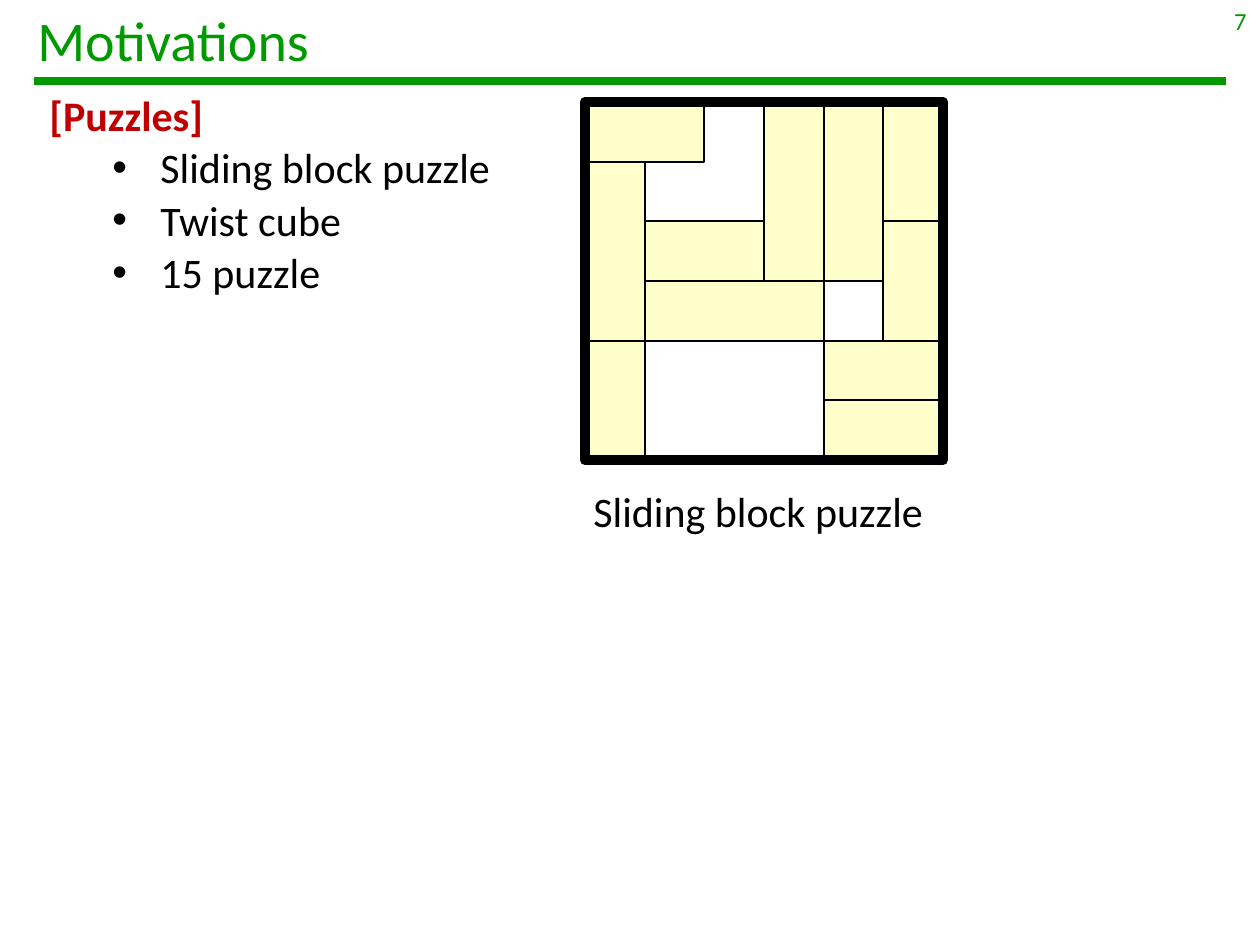
from lxml import etree
from pptx import Presentation
from pptx.dml.color import RGBColor
from pptx.enum.shapes import MSO_CONNECTOR as Connector, MSO_SHAPE as Shape
from pptx.enum.text import MSO_ANCHOR as Anchor, PP_ALIGN as Align
from pptx.oxml.ns import qn
from pptx.util import Emu, Pt

GREEN = RGBColor(0x00, 0x99, 0x00)
RED = RGBColor(0xC0, 0x00, 0x00)
BLACK = RGBColor(0x00, 0x00, 0x00)
CREAM = RGBColor(0xFF, 0xFF, 0xCC)

PX_PER_INCH = 126
BOARD_LEFT, BOARD_TOP, BOARD_SIZE = 585, 102, 358
BOARD_CELLS = 6

# Puzzle pieces: column, row, columns wide, rows high
PIECES = [
    (0, 1, 1, 3), (1, 2, 2, 1), (4, 5, 2, 1), (4, 4, 2, 1),
    (0, 0, 2, 1), (5, 2, 1, 2), (5, 0, 1, 2), (0, 4, 1, 2),
    (4, 0, 1, 3), (3, 0, 1, 3), (1, 3, 3, 1),
]


def px(length):
    return Emu(round(length * 914400 / PX_PER_INCH))


class PageBuilder:
    font = "Calibri"

    def __init__(self, page):
        self.page = page

    def style(self, para, size, color, bold=False):
        for span in para.runs:
            span.font.name = self.font
            span.font.size = Pt(size)
            span.font.bold = bold
            span.font.color.rgb = color

    def text(self, bounds, words, size, color, align=Align.LEFT,
             anchor=Anchor.TOP, wrap=True):
        box = self.page.shapes.add_textbox(*map(px, bounds))
        frame = box.text_frame
        frame.word_wrap = wrap
        frame.vertical_anchor = anchor
        frame.text = words
        para = frame.paragraphs[0]
        para.alignment = align
        self.style(para, size, color)
        return frame

    def bulleted_list(self, bounds, heading, items, size):
        frame = self.text(bounds, heading, size, RED)
        self.style(frame.paragraphs[0], size, RED, bold=True)
        for item in items:
            para = frame.add_paragraph()
            para.text = item
            para.level = 1
            self.style(para, size, BLACK)
            props = para._p.get_or_add_pPr()
            props.set("marL", str(px(111)))
            props.set("indent", str(px(-48)))
            etree.SubElement(props, qn("a:buFont"), typeface="Arial")
            etree.SubElement(props, qn("a:buChar"), char="•")
        for para in frame.paragraphs:
            para.space_before = Pt(size * 0.05)

    def rule(self, left, right, y, color, width):
        line = self.page.shapes.add_connector(
            Connector.STRAIGHT, px(left), px(y), px(right), px(y))
        line.line.color.rgb = color
        line.line.width = Pt(width)
        etree.SubElement(line._element.spPr, qn("a:effectLst"))

    def rectangle(self, bounds, line_width, fill=None):
        block = self.page.shapes.add_shape(Shape.RECTANGLE, *map(px, bounds))
        block.shadow.inherit = False
        if fill is None:
            block.fill.background()
        else:
            block.fill.solid()
            block.fill.fore_color.rgb = fill
        block.line.color.rgb = BLACK
        block.line.width = Pt(line_width)


def main():
    deck = Presentation()
    deck.slide_width, deck.slide_height = px(1260), px(945)
    builder = PageBuilder(deck.slides.add_slide(deck.slide_layouts[6]))

    # Header
    builder.rule(34, 1226, 81, GREEN, 4.5)
    builder.text((25, -4, 1211, 87), "Motivations", 32, GREEN,
                 anchor=Anchor.MIDDLE)
    builder.text((965, 0, 294, 66), "7", 14, GREEN, align=Align.RIGHT)

    # Puzzle list and board caption
    builder.bulleted_list(
        (37, 83, 538, 224), "[Puzzles]",
        ["Sliding block puzzle", "Twist cube", "15 puzzle"], 24)
    caption = builder.text((581, 479, 358, 63), "Sliding block puzzle", 24,
                           BLACK, wrap=False)
    caption.paragraphs[0].space_before = Pt(1.2)

    # Pieces on the grid, then the board frame
    edges = [round(BOARD_SIZE * i / BOARD_CELLS)
             for i in range(BOARD_CELLS + 1)]
    for column, row, wide, high in PIECES:
        left, top = edges[column], edges[row]
        builder.rectangle(
            (BOARD_LEFT + left, BOARD_TOP + top,
             edges[column + wide] - left, edges[row + high] - top),
            0.75, CREAM)
    builder.rectangle((BOARD_LEFT, BOARD_TOP, BOARD_SIZE, BOARD_SIZE), 6)

    deck.save("out.pptx")


if __name__ == "__main__":
    main()
